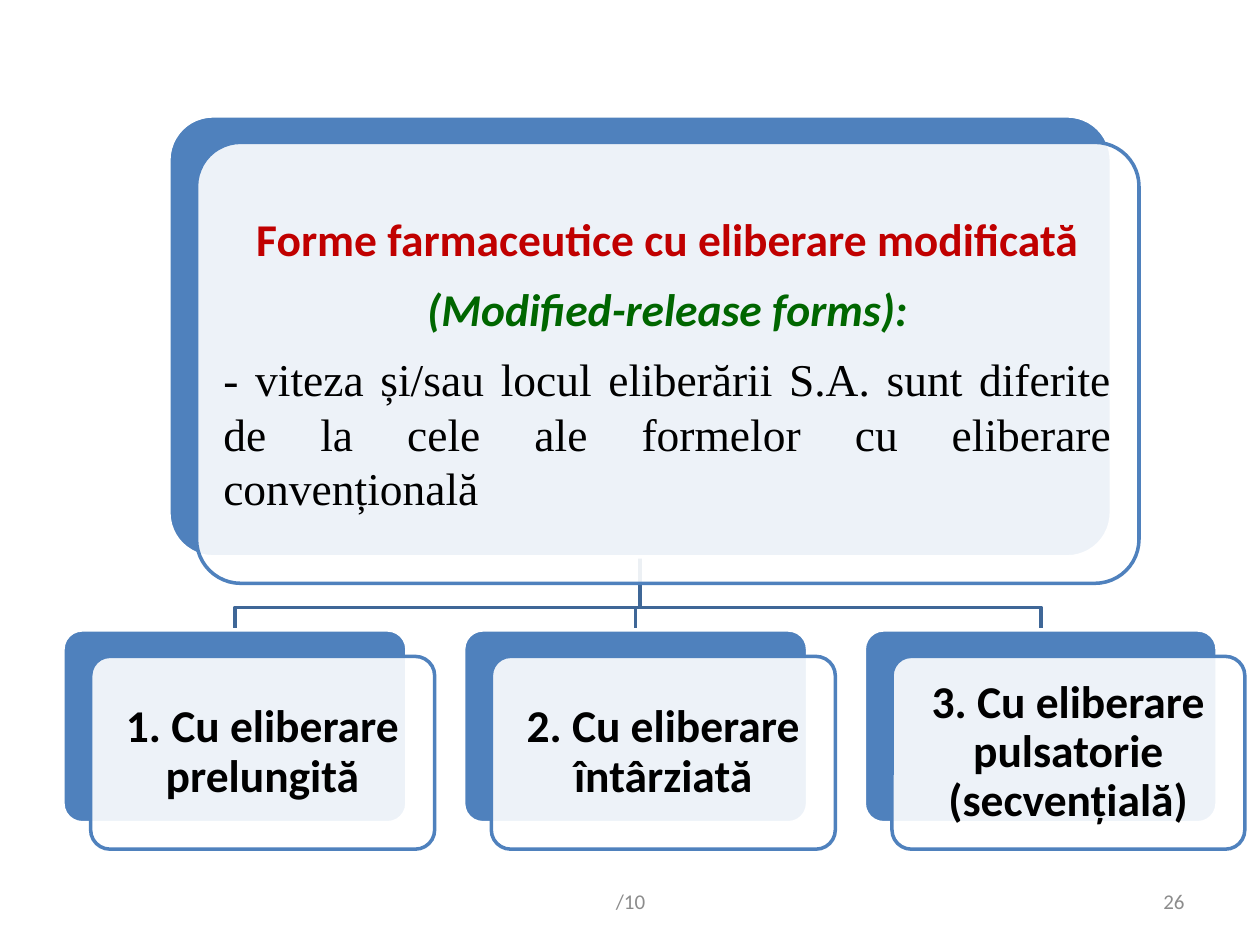
import pptx
import pptx.dml.color
import pptx.enum.shapes
import pptx.enum.text
import pptx.oxml.ns
import pptx.util
from lxml import etree

Inches = pptx.util.Inches
Pt = pptx.util.Pt
ALIGN = pptx.enum.text.PP_ALIGN

WIDTH, HEIGHT = 10, 7.5
BLUE, LINK, WHITE, BLACK, GREY = "4F81BD", "3F6797", "FFFFFF", "000000", "8C8C8C"
OFFSET_X, OFFSET_Y = 0.22, 0.21
PARENT = (1.34, 0.92, 7.48, 3.5)
CHILD_LEFT, CHILD_PITCH, CHILD_TOP, CHILD_HEIGHT = 0.5, 3.18, 5, 1.53
BEND_Y = 4.82

HEADING = {"size": Pt(26), "name": "Calibri", "bold": True, "italic": False}
BODY = {**HEADING, "name": "Times New Roman", "bold": False}
FOOTER = {"size": Pt(12), "name": "Calibri"}

DEFINITION = [
    ("Forme farmaceutice cu eliberare modificată", HEADING, "C00000", ALIGN.CENTER),
    ("(Modified-release forms):", {**HEADING, "italic": True}, "006600", ALIGN.CENTER),
    ("- viteza și/sau locul eliberării S.A. sunt diferite de la cele ale "
     "formelor cu eliberare convențională", BODY, BLACK, ALIGN.JUSTIFY),
]
RELEASE_TYPES = [
    ("1. Cu eliberare prelungită", 2.73),
    ("2. Cu eliberare întârziată", 2.73),
    ("3. Cu eliberare pulsatorie (secvențială)", 2.8),
]


def paint(colour_format, colour):
    """Give a fill, line or font colour its hex value."""
    colour_format.rgb = pptx.dml.color.RGBColor.from_string(colour)


def outline(shape, colour):
    """Draw a two-point outline and drop the shadow."""
    shape.shadow.inherit = False
    paint(shape.line.color, colour)
    shape.line.width = Pt(2)


def write(frame, paragraphs, spacing):
    """Write (text, font, colour, alignment) paragraphs into a frame."""
    frame.word_wrap = True
    frame.vertical_anchor = pptx.enum.text.MSO_ANCHOR.MIDDLE
    for index, (text, font, colour, alignment) in enumerate(paragraphs):
        paragraph = frame.add_paragraph() if index else frame.paragraphs[0]
        for key, value in {"alignment": alignment, **spacing}.items():
            setattr(paragraph, key, value)
        run = paragraph.add_run()
        run.text = text
        for key, value in font.items():
            setattr(run.font, key, value)
        paint(run.font.color, colour)


def rounded_box(slide, left, top, width, height, fill, line):
    """Add a filled and outlined rounded rectangle."""
    box = slide.shapes.add_shape(
        pptx.enum.shapes.MSO_SHAPE.ROUNDED_RECTANGLE,
        *map(Inches, (left, top, width, height)))
    box.adjustments[0] = 0.1
    box.fill.solid()
    paint(box.fill.fore_color, fill)
    outline(box, line)
    return box


def card(slide, left, top, width, height, paragraphs, spacing):
    """Add a blue backing with a translucent text panel offset over it."""
    rounded_box(slide, left, top, width, height, BLUE, WHITE)
    panel = rounded_box(slide, left + OFFSET_X, top + OFFSET_Y, width, height, WHITE, BLUE)
    fill_colour = panel.fill._xPr.find(".//" + pptx.oxml.ns.qn("a:srgbClr"))
    etree.SubElement(fill_colour, pptx.oxml.ns.qn("a:alpha"), val="90000")
    for side in ("left", "top", "right", "bottom"):
        setattr(panel.text_frame, f"margin_{side}", Inches(0.11))
    write(panel.text_frame, paragraphs, spacing)


def branch(slide, child_x):
    """Draw the bent line from the parent card down to a child card."""
    left, top, width, height = PARENT
    parent_x = left + width / 2
    points = [(parent_x, top + height), (parent_x, BEND_Y),
              (child_x, BEND_Y), (child_x, CHILD_TOP)]
    start, *rest = [(Inches(x), Inches(y)) for x, y in points]
    builder = slide.shapes.build_freeform(*start)
    builder.add_line_segments(rest, close=False)
    line = builder.convert_to_shape()
    line.fill.background()
    outline(line, LINK)


def footer(slide, left, width, text, alignment):
    """Add a small grey footer text."""
    box = slide.shapes.add_textbox(*map(Inches, (left, 6.95, width, 0.4)))
    write(box.text_frame, [(text, FOOTER, GREY, alignment)], {})


def main():
    """Build the slide and save it."""
    deck = pptx.Presentation()
    deck.slide_width, deck.slide_height = Inches(WIDTH), Inches(HEIGHT)
    slide = deck.slides.add_slide(deck.slide_layouts[6])
    children = [(CHILD_LEFT + column * CHILD_PITCH, width, text)
                for column, (text, width) in enumerate(RELEASE_TYPES)]
    for left, width, _ in reversed(children):
        branch(slide, left + width / 2)
    card(slide, *PARENT, DEFINITION, {"space_after": Pt(9)})
    for left, width, text in children:
        card(slide, left, CHILD_TOP, width, CHILD_HEIGHT,
             [(text, HEADING, BLACK, ALIGN.CENTER)],
             {"space_after": Pt(9), "line_spacing": 0.9})
    footer(slide, 7.17, 2.33, "26", ALIGN.RIGHT)
    footer(slide, 3.42, 3.17, "/10", ALIGN.CENTER)
    deck.save("out.pptx")


if __name__ == "__main__":
    main()
